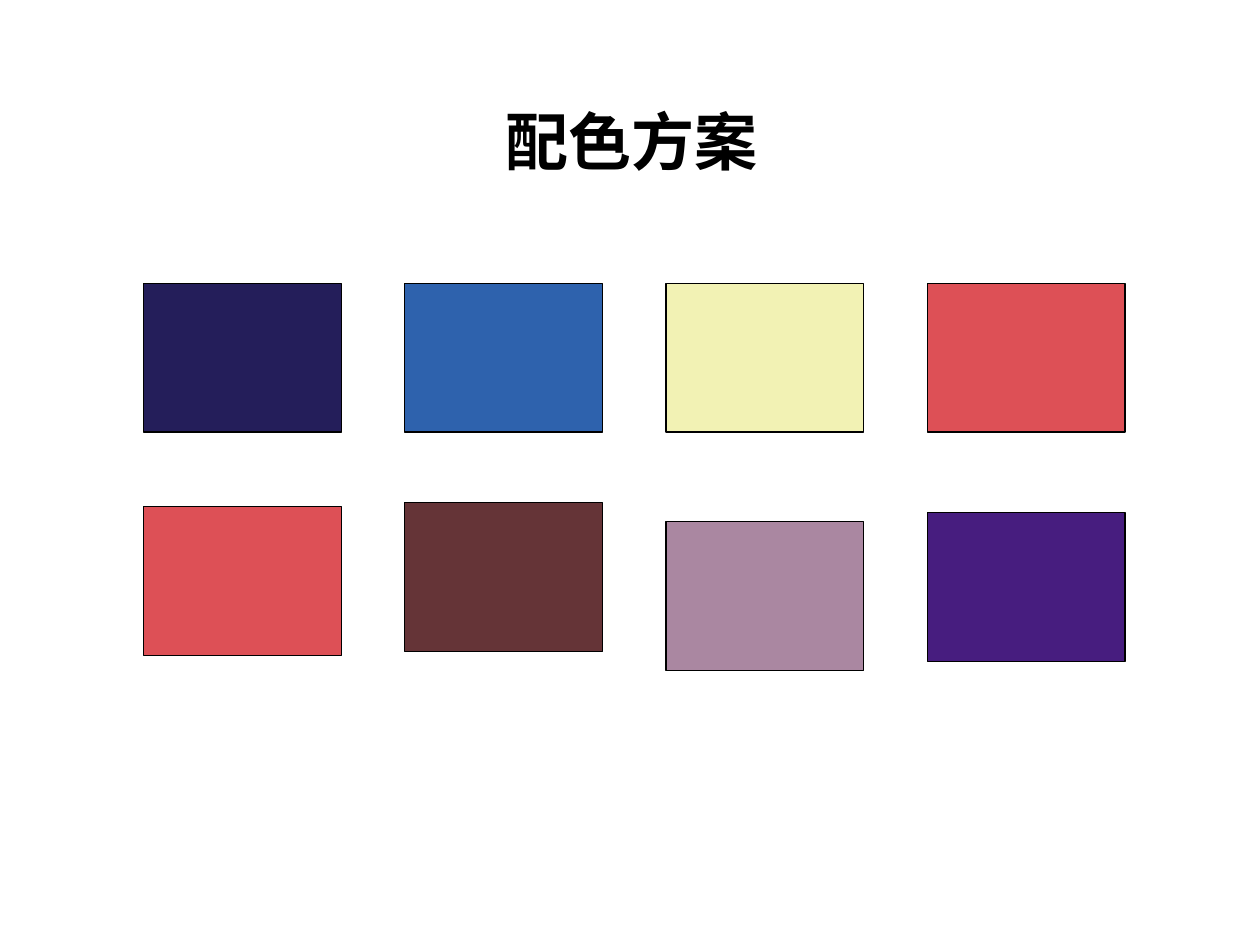
import pptx
import pptx.dml.color
import pptx.enum.shapes
import pptx.enum.text
import pptx.oxml.ns
import pptx.util
from lxml import etree
from pptx.util import Inches

FONT = "Noto Sans CJK SC"
SWATCH_ROWS = [
    [("241E5A", 0), ("2E62AD", 0), ("F2F2B4", 0), ("DD5056", 0)],
    [("DD5056", 0.03), ("653437", 0), ("AA87A1", 0.15), ("471D7F", 0.08)],
]


def set_color(color_format, hex_color):
    color_format.rgb = pptx.dml.color.RGBColor.from_string(hex_color)


def place_title(slide, text, left, top, width, height):
    title = slide.shapes.title
    title.left, title.top, title.width, title.height = left, top, width, height
    frame = title.text_frame
    frame.word_wrap = False
    frame.auto_size = pptx.enum.text.MSO_AUTO_SIZE.SHAPE_TO_FIT_TEXT
    frame.vertical_anchor = pptx.enum.text.MSO_ANCHOR.TOP
    paragraph = frame.paragraphs[0]
    paragraph.alignment = pptx.enum.text.PP_ALIGN.CENTER
    run = paragraph.add_run()
    run.text = text
    run.font.size = pptx.util.Pt(36)
    run.font.bold = True
    run.font.name = FONT
    set_color(run.font.color, "000000")
    east_asian = etree.SubElement(run.font._element, pptx.oxml.ns.qn("a:ea"))
    east_asian.set("typeface", FONT)


def add_swatch(slide, hex_color, left, top, width, height):
    swatch = slide.shapes.add_shape(
        pptx.enum.shapes.MSO_SHAPE.RECTANGLE, left, top, width, height)
    swatch.shadow.inherit = False
    swatch.fill.solid()
    set_color(swatch.fill.fore_color, hex_color)
    set_color(swatch.line.color, "000000")
    swatch.line.width = pptx.util.Pt(0.75)


def add_swatch_row(slide, swatches, left, top, width, height):
    swatch_width = Inches(1.57)
    pitch = (width - swatch_width) / (len(swatches) - 1)
    for column, (hex_color, drop) in enumerate(swatches):
        add_swatch(slide, hex_color, left + round(column * pitch),
                   top + Inches(drop), swatch_width, height)


def main():
    presentation = pptx.Presentation()
    presentation.slide_width = Inches(10)
    presentation.slide_height = Inches(7.5)
    slide = presentation.slides.add_slide(presentation.slide_layouts[5])
    place_title(slide, "配色方案", Inches(3.9), Inches(0.76), Inches(2.23), Inches(0.71))
    for swatches, top in zip(SWATCH_ROWS, (2.25, 3.99)):
        add_swatch_row(slide, swatches, Inches(1.14), Inches(top), Inches(7.79), Inches(1.18))
    presentation.save("out.pptx")


if __name__ == "__main__":
    main()
